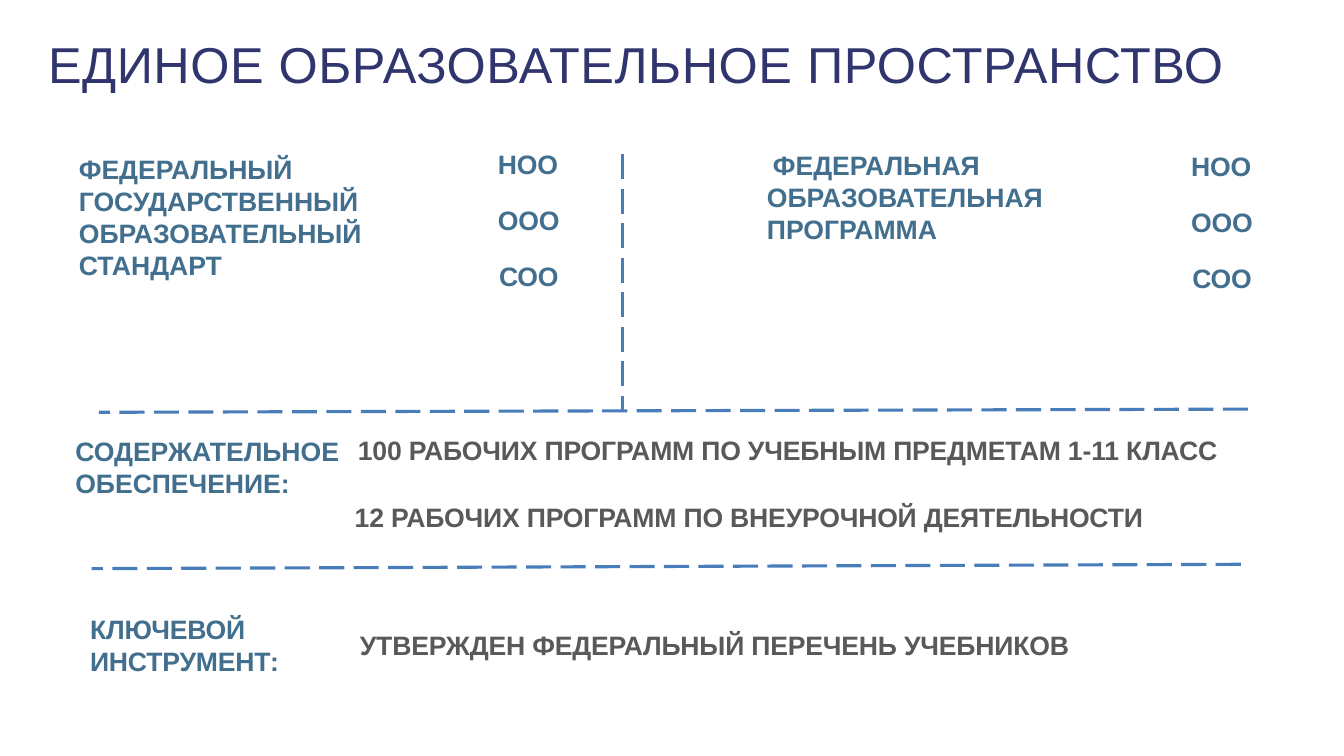
from pptx import Presentation
from pptx.dml.color import RGBColor
from pptx.enum import dml, text
from pptx.util import Cm, Pt

NAVY = RGBColor(0x30, 0x35, 0x6D)
TEAL = RGBColor(0x42, 0x6F, 0x8E)
GREY = RGBColor(0x59, 0x59, 0x59)
BLUE = RGBColor(0x49, 0x7D, 0xBA)

# Places and lengths are in centimetres: left, top, width, height
TITLE = ("ЕДИНОЕ ОБРАЗОВАТЕЛЬНОЕ ПРОСТРАНСТВО", (1.18, 0.79, 33.17, 1.57))

HEADINGS = [  # text, box, first-line indent, letter spacing in points
    ("ФЕДЕРАЛЬНЫЙ ГОСУДАРСТВЕННЫЙ ОБРАЗОВАТЕЛЬНЫЙ СТАНДАРТ",
     (1.96, 3.82, 7.7, 3.28), 0, 0),
    ("ФЕДЕРАЛЬНАЯ ОБРАЗОВАТЕЛЬНАЯ ПРОГРАММА",
     (19.3, 3.73, 7.47, 2.46), 0.15, 0),
    ("СОДЕРЖАТЕЛЬНОЕ ОБЕСПЕЧЕНИЕ:", (1.87, 10.92, 7.16, 1.65), 0, 0),
    ("КЛЮЧЕВОЙ\nИНСТРУМЕНТ:", (2.24, 15.42, 5.38, 1.65), 0, -0.1),
]

LEVELS = [("НОО", 0), ("ООО", 0), ("СОО", 0.03)]  # text, shift to the right
LEVEL_COLUMNS = [(12.52, 3.7), (29.99, 3.75)]
LEVEL_STEP = 1.41

FACTS = [
    ("100 РАБОЧИХ ПРОГРАММ ПО УЧЕБНЫМ ПРЕДМЕТАМ 1-11 КЛАСС",
     (8.99, 10.9, 24.61, 0.84)),
    ("12 РАБОЧИХ ПРОГРАММ ПО ВНЕУРОЧНОЙ ДЕЯТЕЛЬНОСТИ",
     (8.91, 12.59, 22.17, 0.84)),
    ("УТВЕРЖДЕН ФЕДЕРАЛЬНЫЙ ПЕРЕЧЕНЬ УЧЕБНИКОВ",
     (9.04, 15.82, 19.33, 0.84)),
]

DIVIDERS = [  # each outline is a list of strokes: from x, y to x, y
    [(15.69, 3.89, 15.69, 10.36), (31.45, 10.31, 2.49, 10.39)],
    [(31.27, 14.22, 2.31, 14.33)],
]


def write(sp, content, box, size=19, color=TEAL, bold=True, spacing=0.0,
          indent=0.0, anchor=text.MSO_ANCHOR.TOP):
    """Place a text shape and fill it, one paragraph for each line."""
    sp.left, sp.top, sp.width, sp.height = map(Cm, box)
    tf = sp.text_frame
    tf.word_wrap = True
    tf.auto_size = text.MSO_AUTO_SIZE.NONE
    tf.vertical_anchor = anchor
    tf.margin_left = tf.margin_right = tf.margin_bottom = 0
    tf.margin_top = Cm(0.03)
    for i, line in enumerate(content.split("\n")):
        p = tf.add_paragraph() if i else tf.paragraphs[0]
        p.alignment = text.PP_ALIGN.LEFT
        p.space_before = Pt(0 if i else 1)
        pPr = p._p.get_or_add_pPr()
        pPr.set("marL", str(Cm(0.03)))
        pPr.set("indent", str(Cm(indent)))
        r = p.add_run()
        r.text = line
        r.font.name, r.font.size, r.font.bold = "Arial", Pt(size), bold
        r.font.color.rgb = color
        r._r.get_or_add_rPr().set("spc", str(round(spacing * 100)))


def add_text(slide, content, box, **style):
    write(slide.shapes.add_textbox(0, 0, 0, 0), content, box, **style)


def add_divider(slide, strokes):
    """Draw dashed strokes as one open outline."""
    x, y = strokes[0][:2]
    outline = slide.shapes.build_freeform(Cm(x), Cm(y))
    for i, (x1, y1, x2, y2) in enumerate(strokes):
        if i:
            outline.move_to(Cm(x1), Cm(y1))
        outline.add_line_segments([(Cm(x2), Cm(y2))], close=False)
    sp = outline.convert_to_shape()
    sp.shadow.inherit = False
    sp.fill.background()
    sp.line.color.rgb = BLUE
    sp.line.width = Pt(2.25)
    sp.line.dash_style = dml.MSO_LINE.LONG_DASH


def main():
    prs = Presentation()
    prs.slide_width, prs.slide_height = Cm(33.87), Cm(19.05)
    slide = prs.slides.add_slide(prs.slide_layouts[5])

    write(slide.shapes.title, *TITLE, size=36, color=NAVY, bold=False,
          spacing=0.4, anchor=text.MSO_ANCHOR.MIDDLE)
    for content, box, indent, spacing in HEADINGS:
        add_text(slide, content, box, indent=indent, spacing=spacing)
    for left, top in LEVEL_COLUMNS:
        for i, (level, shift) in enumerate(LEVELS):
            box = (left + shift, top + i * LEVEL_STEP, 1.83, 0.84)
            add_text(slide, level, box, spacing=-0.1)
    for content, box in FACTS:
        add_text(slide, content, box, color=GREY, spacing=-0.1)
    for strokes in DIVIDERS:
        add_divider(slide, strokes)

    prs.save("out.pptx")


if __name__ == "__main__":
    main()
